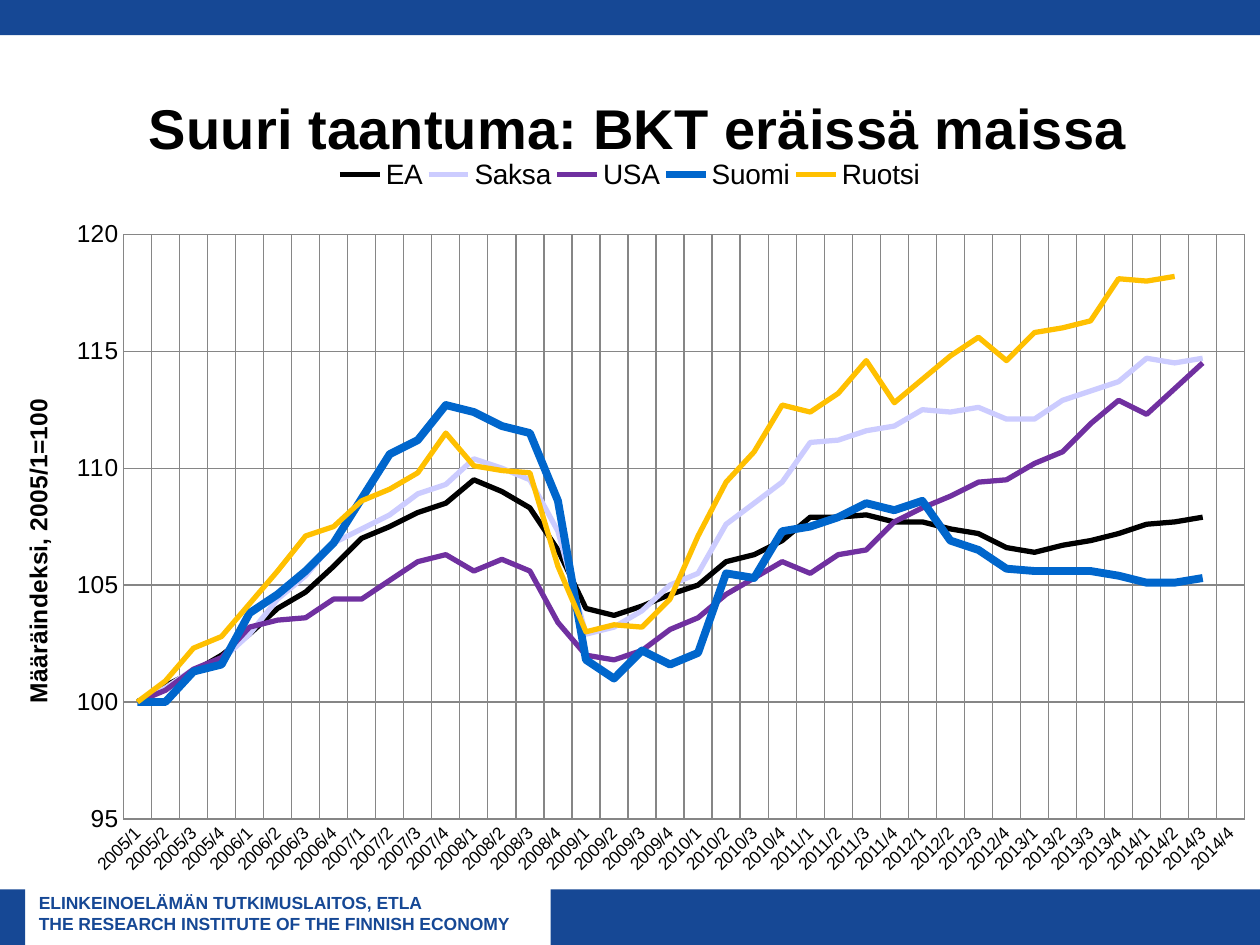
from dataclasses import dataclass

from lxml import etree
from pptx import Presentation
from pptx.chart.data import CategoryChartData
from pptx.dml.color import RGBColor
from pptx.enum.chart import XL_CHART_TYPE, XL_LEGEND_POSITION, XL_TICK_MARK
from pptx.enum.shapes import MSO_SHAPE
from pptx.oxml.ns import qn
from pptx.util import Inches, Pt

LINE_CHART = XL_CHART_TYPE.LINE
RECTANGLE = MSO_SHAPE.RECTANGLE
LEGEND_TOP = XL_LEGEND_POSITION.TOP
NO_TICK = XL_TICK_MARK.NONE


@dataclass(frozen=True)
class Theme:
    font: str = "Arial"
    blue: str = "164895"
    black: str = "000000"
    grid: str = "868686"
    title_size: float = 32
    legend_size: float = 16
    axis_size: float = 14
    small_size: float = 10


CATEGORIES = [f"{year}/{quarter}" for year in range(2005, 2015) for quarter in range(1, 5)]

# name, colour, line width in points, values
SERIES = [
    ("EA", "000000", 3, [
        100, 100.7, 101.3, 102, 102.9, 104, 104.7, 105.8, 107, 107.5,
        108.1, 108.5, 109.5, 109, 108.3, 106.5, 104, 103.7, 104.1, 104.6,
        105, 106, 106.3, 106.9, 107.9, 107.9, 108, 107.7, 107.7, 107.4,
        107.2, 106.6, 106.4, 106.7, 106.9, 107.2, 107.6, 107.7, 107.9, None]),
    ("Saksa", "CCCCFF", 3, [
        100, 100.6, 101.4, 101.8, 102.9, 104.4, 105.4, 106.8, 107.4, 108,
        108.9, 109.3, 110.4, 110, 109.5, 107.3, 102.9, 103.2, 103.9, 105,
        105.5, 107.6, 108.5, 109.4, 111.1, 111.2, 111.6, 111.8, 112.5, 112.4,
        112.6, 112.1, 112.1, 112.9, 113.3, 113.7, 114.7, 114.5, 114.7, None]),
    ("USA", "7030A0", 3, [
        100, 100.5, 101.4, 101.9, 103.2, 103.5, 103.6, 104.4, 104.4, 105.2,
        106, 106.3, 105.6, 106.1, 105.6, 103.4, 102, 101.8, 102.2, 103.1,
        103.6, 104.6, 105.3, 106, 105.5, 106.3, 106.5, 107.7, 108.3, 108.8,
        109.4, 109.5, 110.2, 110.7, 111.9, 112.9, 112.3, 113.4, 114.5, None]),
    ("Suomi", "0066CC", 4.5, [
        100, 100, 101.3, 101.6, 103.8, 104.6, 105.6, 106.8, 108.7, 110.6,
        111.2, 112.7, 112.4, 111.8, 111.5, 108.6, 101.8, 101, 102.2, 101.6,
        102.1, 105.5, 105.3, 107.3, 107.5, 107.9, 108.5, 108.2, 108.6, 106.9,
        106.5, 105.7, 105.6, 105.6, 105.6, 105.4, 105.1, 105.1, 105.3, None]),
    ("Ruotsi", "FFC000", 3, [
        100, 100.9, 102.3, 102.8, 104.2, 105.6, 107.1, 107.5, 108.6, 109.1,
        109.8, 111.5, 110.1, 109.9, 109.8, 105.8, 103, 103.3, 103.2, 104.4,
        107.1, 109.4, 110.7, 112.7, 112.4, 113.2, 114.6, 112.8, 113.8, 114.8,
        115.6, 114.6, 115.8, 116, 116.3, 118.1, 118, 118.2, None, None]),
]


def place(element, frame, part, after=None):
    """Position a chart part (x, y and optionally w, h) given in slide inches."""
    for old in element.findall(qn("c:layout")):
        element.remove(old)
    layout = etree.Element(qn("c:layout"))
    manual = etree.SubElement(layout, qn("c:manualLayout"))
    left, top, width, height = frame
    fractions = [(part[0] - left) / width, (part[1] - top) / height]
    if len(part) == 4:
        fractions += [part[2] / width, part[3] / height]
    settings = [("xMode", "edge"), ("yMode", "edge")]
    if after is None:
        settings.insert(0, ("layoutTarget", "inner"))
    settings += [(key, f"{value:.4f}") for key, value in zip("xywh", fractions)]
    for tag, value in settings:
        etree.SubElement(manual, qn(f"c:{tag}")).set("val", value)
    if after is None:
        element.insert(0, layout)
    else:
        element.find(qn(after)).addnext(layout)


class SlideBuilder:
    def __init__(self, slide, theme):
        self.slide = slide
        self.theme = theme

    def style(self, font, size, color, bold=False):
        font.name = self.theme.font
        font.size = Pt(size)
        font.bold = bold
        font.color.rgb = RGBColor.from_string(color)

    def band(self, left, top, width, height):
        shape = self.slide.shapes.add_shape(
            RECTANGLE, Inches(left), Inches(top), Inches(width), Inches(height))
        shape.shadow.inherit = False
        shape.fill.solid()
        shape.fill.fore_color.rgb = RGBColor.from_string(self.theme.blue)
        shape.line.fill.background()

    def text(self, left, top, width, height, lines):
        box = self.slide.shapes.add_textbox(
            Inches(left), Inches(top), Inches(width), Inches(height))
        frame = box.text_frame
        frame.word_wrap = True
        frame.text = "\n".join(lines)
        for paragraph in frame.paragraphs:
            for span in paragraph.runs:
                self.style(span.font, self.theme.small_size, self.theme.blue, True)

    def heading(self, owner, text, size, frame, position):
        """Give a chart or an axis its bold title."""
        title = owner.chart_title if hasattr(owner, "chart_title") else owner.axis_title
        title.text_frame.text = text
        for span in title.text_frame.paragraphs[0].runs:
            self.style(span.font, size, self.theme.black, True)
        place(title._element, frame, position, "c:tx")
        return title

    def axis(self, axis, size):
        axis.major_tick_mark = axis.minor_tick_mark = NO_TICK
        axis.has_major_gridlines = True
        for line in (axis.format.line, axis.major_gridlines.format.line):
            line.color.rgb = RGBColor.from_string(self.theme.grid)
            line.width = Pt(0.75)
        self.style(axis.tick_labels.font, size, self.theme.black)

    def line_chart(self, frame, categories, series, title, axis_title):
        theme = self.theme
        data = CategoryChartData(number_format="0.0")
        data.categories = categories
        for name, _, _, values in series:
            data.add_series(name, values)
        chart = self.slide.shapes.add_chart(
            LINE_CHART, *(Inches(length) for length in frame), data).chart
        self.style(chart.font, theme.small_size, theme.black)
        self.heading(chart, title, theme.title_size, frame, (1.1, 0.65))

        chart.has_legend = True
        chart.legend.position = LEGEND_TOP
        chart.legend.include_in_layout = False
        self.style(chart.legend.font, theme.legend_size, theme.black)
        place(chart.legend._element, frame, (2.65, 1.22, 4.7, 0.33), "c:legendPos")

        category_axis, value_axis = chart.category_axis, chart.value_axis
        self.axis(category_axis, theme.small_size)
        labels = category_axis._element.find(qn("c:txPr"))
        labels.find(qn("a:bodyPr")).set("rot", "-2700000")
        self.axis(value_axis, theme.axis_size)
        value_axis.minimum_scale = 95
        value_axis.maximum_scale = 120
        value_axis.major_unit = 5
        value_axis.tick_labels.number_format = "0"
        value_axis.tick_labels.number_format_is_linked = False
        side_title = self.heading(value_axis, axis_title, theme.axis_size, frame, (0.14, 3.13))
        body = side_title.text_frame._txBody.find(qn("a:bodyPr"))
        body.set("rot", "-5400000")
        body.set("vert", "horz")

        for line, (_, color, width, _) in zip(chart.plots[0].series, series):
            line.smooth = False
            line.format.line.color.rgb = RGBColor.from_string(color)
            line.format.line.width = Pt(width)
        plot_area = chart._chartSpace.chart.plotArea
        place(plot_area, frame, (0.98, 1.86, 8.9, 4.64))


def main():
    deck = Presentation()
    deck.slide_width, deck.slide_height = Inches(10), Inches(7.5)
    page = SlideBuilder(deck.slides.add_slide(deck.slide_layouts[6]), Theme())
    page.band(0, 0, 10, 0.28)
    page.band(0, 7.06, 0.2, 0.44)
    page.band(4.37, 7.06, 5.63, 0.44)
    page.text(0.21, 7.03, 4.17, 0.43, [
        "ELINKEINOELÄMÄN TUTKIMUSLAITOS, ETLA",
        "THE RESEARCH INSTITUTE OF THE FINNISH ECONOMY"])
    page.line_chart((-0.09, 0.43, 10.18, 6.64), CATEGORIES, SERIES,
                    "Suuri taantuma: BKT eräissä maissa", "Määräindeksi, 2005/1=100")
    deck.save("out.pptx")


if __name__ == "__main__":
    main()
